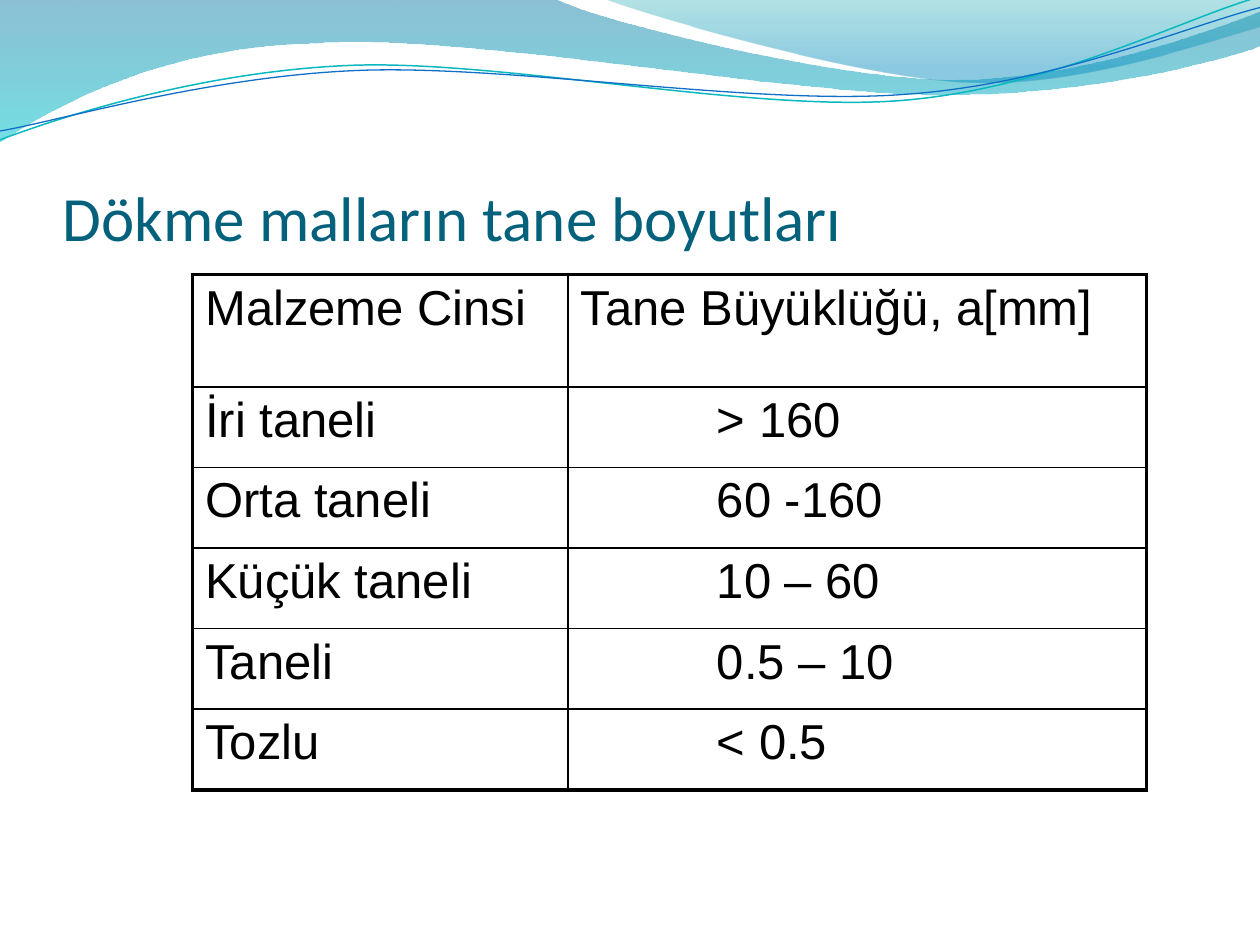
from lxml.etree import SubElement
from pptx import Presentation
from pptx.dml.color import RGBColor
from pptx.enum.text import MSO_ANCHOR as Anchor
from pptx.oxml.ns import qn
from pptx.util import Inches, Pt


def color(hex_value):
    return RGBColor.from_string(hex_value)


def add_wave(shapes, points, closed):
    """Draw an outline: 2-number steps are lines, 6-number steps are Bezier curves."""
    start, *steps = points
    builder = shapes.build_freeform(Inches(start[0]), Inches(start[1]), scale=1.0)
    builder.add_line_segments([(Inches(step[-2]), Inches(step[-1])) for step in steps],
                              close=closed)
    wave = builder.convert_to_shape()
    wave.shadow.inherit = False
    # Turn the straight segments of curved steps into Bezier segments
    segments = list(wave._element.spPr.iter(qn("a:lnTo")))
    for segment, step in zip(segments, steps):
        if len(step) == 6:
            segment.tag = qn("a:cubicBezTo")
            for i in (0, 2):
                control = SubElement(segment, qn("a:pt"),
                                     x=str(Inches(step[i]) - wave.left),
                                     y=str(Inches(step[i + 1]) - wave.top))
                segment.insert(i // 2, control)
    return wave


deck = Presentation()
deck.slide_width, deck.slide_height = Inches(10), Inches(7.5)
page = deck.slides.add_slide(deck.slide_layouts[6])

# Translucent gradient waves: points, then (position, colour, opacity) stops
bands = [
    ([(0, 0), (4.4, -0.01), (4.76, 0.17, 6.64, 0.63, 7.58, 0.63),
      (8.53, 0.63, 9.58, 0.26, 10, 0.09), (10.01, 0.36),
      (9.83, 0.44, 8.7, 0.76, 7.46, 0.75), (6.22, 0.75, 3.82, 0.28, 2.57, 0.34),
      (1.29, 0.36, 0.46, 0.83, -0.01, 1.13)],
     [(0, "0074A1", 45), (1, "00C6CF", 55)]),
    ([(4.79, -0.01), (5.09, 0.11, 6.82, 0.62, 7.69, 0.65),
      (8.56, 0.69, 9.61, 0.32, 10, 0.21), (10, 0)],
     [(0, "00A1A9", 30), (0.8, "008BBF", 45)]),
]
for points, stops in bands:
    band = add_wave(page.shapes, points, True)
    band.line.fill.background()
    band.fill.gradient()
    band.fill.gradient_angle = 270
    for stop, (position, hex_value, _) in zip(band.fill.gradient_stops, stops):
        stop.position = position
        stop.color.rgb = color(hex_value)
    for node, (_, _, opacity) in zip(band._element.spPr.iter(qn("a:srgbClr")), stops):
        SubElement(node, qn("a:alpha"), val=str(opacity * 1000))

# Thin wave lines
strands = [
    ([(0, 1.11), (0.48, 0.93, 1.58, 0.57, 2.77, 0.52), (3.95, 0.47, 5.93, 0.89, 7.13, 0.8),
      (8.33, 0.71, 9.38, 0.15, 9.98, -0.02)], "0AB8BF", 0.85),
    ([(0, 1.04), (0.47, 0.96, 1.64, 0.61, 2.83, 0.56), (4.03, 0.51, 5.97, 0.84, 7.17, 0.75),
      (8.36, 0.67, 9.41, 0.21, 10, 0.06)], "0F6FC6", 0.75),
]
for points, hex_value, width in strands:
    strand = add_wave(page.shapes, points, False)
    strand.fill.background()
    strand.line.color.rgb = color(hex_value)
    strand.line.width = Pt(width)

# Title
title = page.shapes.add_textbox(Inches(0.5), Inches(0.77), Inches(9), Inches(1.25))
frame_format = {"word_wrap": True, "vertical_anchor": Anchor.BOTTOM, "margin_left": 0,
                "margin_top": Inches(0.05), "margin_right": 0, "margin_bottom": 0}
for name, value in frame_format.items():
    setattr(title.text_frame, name, value)
span = title.text_frame.paragraphs[0].add_run()
span.text = "Dökme malların tane boyutları"
for name, value in {"name": "Calibri", "size": Pt(36)}.items():
    setattr(span.font, name, value)
span.font.color.rgb = color("04617B")

# Grain size table
rows = [
    ("Malzeme Cinsi", "Tane Büyüklüğü, a[mm]"),
    ("İri taneli", "> 160"),
    ("Orta taneli", "60 -160"),
    ("Küçük taneli", "10 – 60"),
    ("Taneli", "0.5 – 10"),
    ("Tozlu", "< 0.5"),
]
last_row, last_column = len(rows) - 1, 1
table = page.shapes.add_table(len(rows), 2, Inches(1.53), Inches(2.18),
                              Inches(7.57), Inches(4.09)).table
table.first_row = table.horz_banding = False
for column, width in zip(table.columns, (2.98, 4.59)):
    column.width = Inches(width)
for r, texts in enumerate(rows):
    table.rows[r].height = Inches(0.64 if r else 0.89)
    for c, text in enumerate(texts):
        cell = table.cell(r, c)
        cell.fill.background()
        # Size values are indented below their heading
        cell.margin_left = Inches(1.18 if r and c else 0.1)
        span = cell.text_frame.paragraphs[0].add_run()
        span.text = text
        for name, value in {"name": "Arial", "size": Pt(28), "bold": False}.items():
            setattr(span.font, name, value)
        span.font.color.rgb = color("000000")
        # Thick outer frame, thin inner rules
        outer = {"L": c == 0, "R": c == last_column, "T": r == 0, "B": r == last_row}
        properties = cell._tc.get_or_add_tcPr()
        for i, (side, is_outer) in enumerate(outer.items()):
            border = SubElement(properties, qn(f"a:ln{side}"),
                                w=str(Pt(2.25 if is_outer else 1)))
            SubElement(SubElement(border, qn("a:solidFill")), qn("a:srgbClr"), val="000000")
            properties.insert(i, border)

deck.save("out.pptx")
